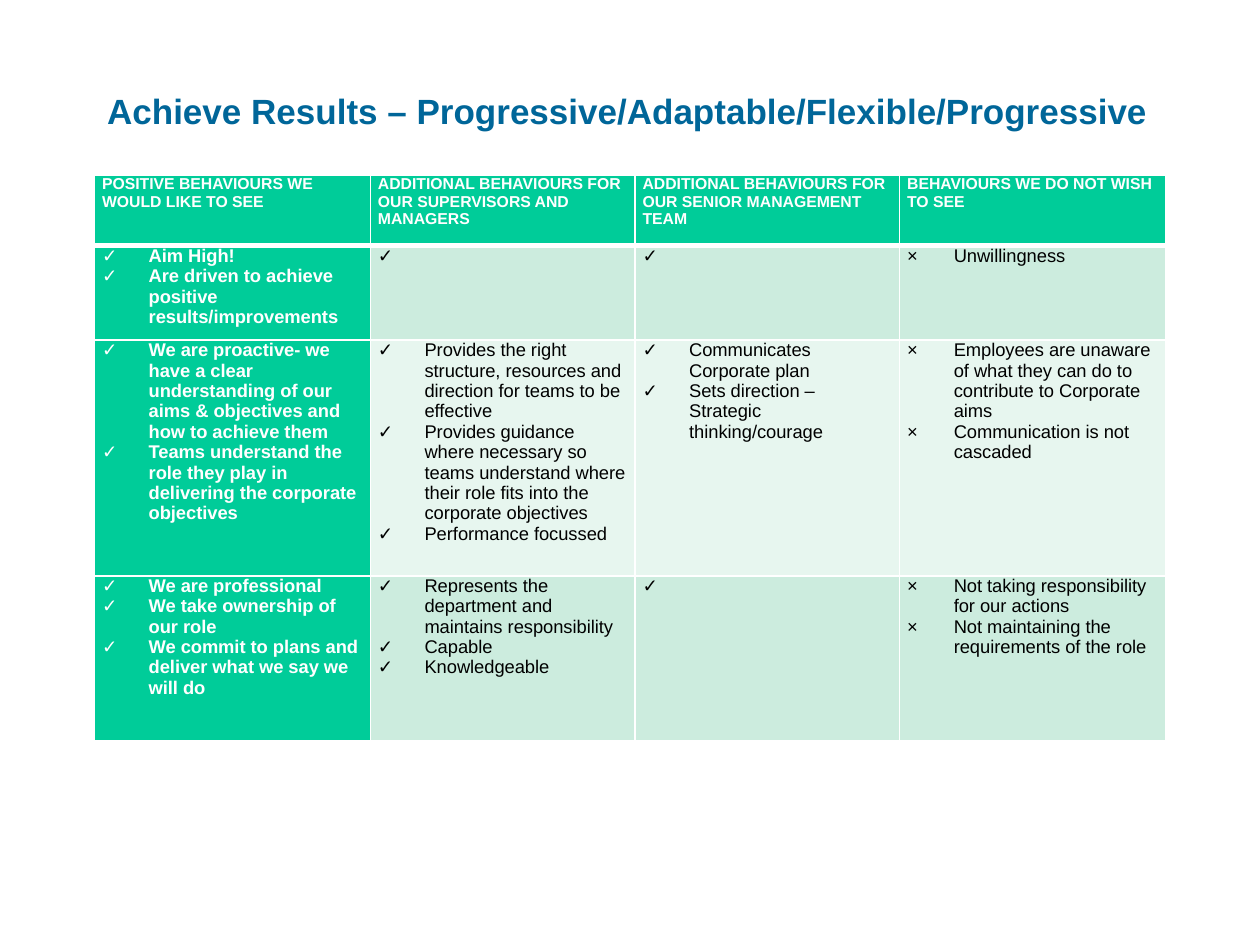
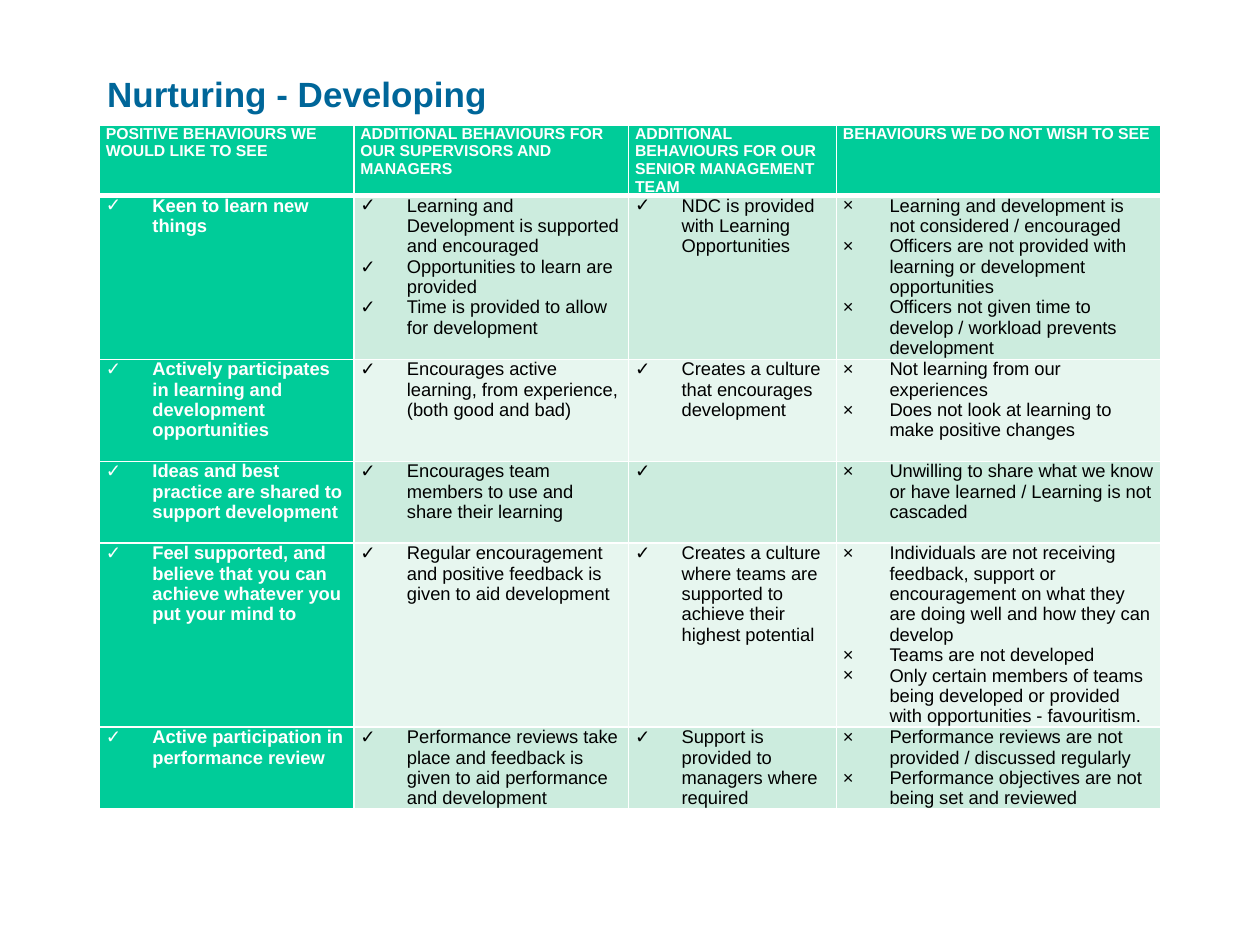
from lxml import etree
from pptx import Presentation
from pptx.dml.color import RGBColor
from pptx.enum.text import MSO_ANCHOR, MSO_AUTO_SIZE, PP_ALIGN
from pptx.oxml.ns import qn
from pptx.util import Inches, Pt

LEFT = PP_ALIGN.LEFT
TOP, MIDDLE = MSO_ANCHOR.TOP, MSO_ANCHOR.MIDDLE
NO_FIT = MSO_AUTO_SIZE.NONE
TITLE_ONLY = 5

# Colours
BLUE = RGBColor(0x00, 0x66, 0x99)
GREEN = RGBColor(0x00, 0xCC, 0x99)
MINT = RGBColor(0xCC, 0xEC, 0xDE)
PALE_MINT = RGBColor(0xE7, 0xF6, 0xEF)
WHITE = RGBColor(0xFF, 0xFF, 0xFF)
BLACK = RGBColor(0x00, 0x00, 0x00)

# Text formats
TITLE = {"name": "Arial", "size": Pt(20), "bold": True}
HEADING = {"name": "Arial", "size": Pt(9), "bold": True}
WANTED = {"name": "Arial", "size": Pt(10.5), "bold": True}
PLAIN = {"name": "Arial", "size": Pt(10.5), "bold": False}

TICK, CROSS = "✓", "×"
COLUMN_BULLETS = [TICK, TICK, TICK, CROSS]
BULLET_INDENT = Inches(0.37)
THIN, THICK = Pt(1), Pt(3)
BULLET_ONLY = [" "]

HEADINGS = [
    "POSITIVE BEHAVIOURS WE WOULD LIKE TO SEE",
    "ADDITIONAL BEHAVIOURS FOR OUR SUPERVISORS AND MANAGERS",
    "ADDITIONAL BEHAVIOURS FOR OUR SENIOR MANAGEMENT TEAM",
    "BEHAVIOURS WE DO NOT WISH TO SEE",
]

# Each row lists the points of its four cells
RESULTS_ROWS = [
    [
        ["Aim High!", "Are driven to achieve positive results/improvements"],
        BULLET_ONLY,
        BULLET_ONLY,
        ["Unwillingness"],
    ],
    [
        ["We are proactive- we have a clear understanding of our aims & objectives "
         "and how to achieve them",
         "Teams understand the role they play in delivering the corporate objectives"],
        ["Provides the right structure, resources and direction for teams to be effective",
         "Provides guidance where necessary so teams understand where their role fits "
         "into the corporate objectives",
         "Performance focussed"],
        ["Communicates Corporate plan", "Sets direction – Strategic thinking/courage"],
        ["Employees are unaware of what they can do to contribute to Corporate aims",
         "Communication is not cascaded"],
    ],
    [
        ["We are professional", "We take ownership of our role",
         "We commit to plans and deliver what we say we will do"],
        ["Represents the department and maintains responsibility", "Capable",
         "Knowledgeable"],
        BULLET_ONLY,
        ["Not taking responsibility for our actions",
         "Not maintaining the requirements of the role"],
    ],
]

NURTURING_ROWS = [
    [
        ["Keen to learn new things"],
        ["Learning and Development is supported and encouraged",
         "Opportunities to learn are provided",
         "Time is provided to allow for development"],
        ["NDC is provided with Learning Opportunities"],
        ["Learning and development is not considered / encouraged",
         "Officers are not provided with learning or development opportunities",
         "Officers not given time to develop / workload prevents development"],
    ],
    [
        ["Actively participates in learning and development opportunities"],
        ["Encourages active learning, from experience, (both good and bad)"],
        ["Creates a culture that encourages development"],
        ["Not learning from our experiences",
         "Does not look at learning to make positive changes"],
    ],
    [
        ["Ideas and best practice are shared to support development"],
        ["Encourages team members to use and share their learning"],
        BULLET_ONLY,
        ["Unwilling to share what we know or have learned / Learning is not cascaded"],
    ],
    [
        ["Feel supported, and believe that you can achieve whatever you put your mind to"],
        ["Regular encouragement and positive feedback is given to aid development"],
        ["Creates a culture where teams are supported to achieve their highest potential"],
        ["Individuals are not receiving feedback, support or encouragement on what they "
         "are doing well and how they can develop",
         "Teams are not developed",
         "Only certain members of teams being developed or provided with opportunities "
         "- favouritism."],
    ],
    [
        ["Active participation in performance review"],
        ["Performance reviews take place and feedback is given to aid performance "
         "and development"],
        ["Support is provided to managers where required"],
        ["Performance reviews are not provided / discussed regularly",
         "Performance objectives are not being set and reviewed"],
    ],
]


def add_span(paragraph, text, formats, color):
    span = paragraph.add_run()
    span.text = text
    for name, value in formats.items():
        setattr(span.font, name, value)
    span.font.color.rgb = color


def add_bullet(paragraph, symbol):
    properties = paragraph._p.get_or_add_pPr()
    properties.set("marL", str(BULLET_INDENT))
    properties.set("indent", str(-BULLET_INDENT))
    etree.SubElement(properties, qn("a:buFont")).set("typeface", "Arial")
    etree.SubElement(properties, qn("a:buChar")).set("char", symbol)


def set_borders(cell, top, bottom):
    properties = cell._tc.get_or_add_tcPr()
    widths = {"a:lnL": THIN, "a:lnR": THIN, "a:lnT": top, "a:lnB": bottom}
    for tag, width in widths.items():
        line = etree.SubElement(properties, qn(tag), w=str(width))
        fill = etree.SubElement(line, qn("a:solidFill"))
        etree.SubElement(fill, qn("a:srgbClr"), val=str(WHITE))


def fill_cell(cell, points, formats, color, background, inset, bullet=None):
    cell.margin_left = cell.margin_right = inset
    cell.margin_top = cell.margin_bottom = 0
    cell.vertical_anchor = TOP
    cell.fill.solid()
    cell.fill.fore_color.rgb = background
    frame = cell.text_frame
    for number, point in enumerate(points):
        paragraph = frame.add_paragraph() if number else frame.paragraphs[0]
        if bullet:
            add_bullet(paragraph, bullet)
        add_span(paragraph, point, formats, color)


def add_title(page, text, height):
    box = page.shapes.title
    box.left, box.top, box.width, box.height = (
        Inches(0.75), Inches(0.5), Inches(8.5), Inches(height))
    frame = box.text_frame
    frame.auto_size = NO_FIT
    frame.vertical_anchor = MIDDLE
    paragraph = frame.paragraphs[0]
    paragraph.alignment = LEFT
    add_span(paragraph, text, TITLE, BLUE)


def add_behaviour_table(page, left, top, widths, heights, inset, rows):
    box = page.shapes.add_table(
        len(heights), len(widths), Inches(left), Inches(top),
        Inches(sum(widths)), Inches(sum(heights)))
    table = box.table
    for column, width in zip(table.columns, widths):
        column.width = Inches(width)
    for row, height in zip(table.rows, heights):
        row.height = Inches(height)

    # Heading row, set off by a thick rule
    for column, heading in enumerate(HEADINGS):
        cell = table.cell(0, column)
        set_borders(cell, THIN, THICK)
        fill_cell(cell, [heading], HEADING, WHITE, GREEN, Inches(inset))

    # Banded rows with a green first column
    for number, row in enumerate(rows, start=1):
        band = MINT if number % 2 else PALE_MINT
        for column, points in enumerate(row):
            cell = table.cell(number, column)
            set_borders(cell, THICK if number == 1 else THIN, THIN)
            look = (PLAIN, BLACK, band) if column else (WANTED, WHITE, GREEN)
            fill_cell(cell, points, *look, Inches(inset), COLUMN_BULLETS[column])


def main():
    deck = Presentation()
    deck.slide_width, deck.slide_height = Inches(10), Inches(7.5)
    layout = deck.slide_layouts[TITLE_ONLY]

    # Achieve results
    page = deck.slides.add_slide(layout)
    add_title(page, "Achieve Results – Progressive/Adaptable/Flexible/Progressive", 0.75)
    add_behaviour_table(page, 0.75, 1.39, [2.19, 2.1, 2.1, 2.11],
                        [0.56, 0.75, 1.87, 1.31], 0.06, RESULTS_ROWS)

    # Nurturing
    page = deck.slides.add_slide(layout)
    add_title(page, "Nurturing - Developing", 0.49)
    add_behaviour_table(page, 0.79, 0.99, [2.02, 2.18, 1.65, 2.57],
                        [0.56, 1.3, 0.81, 0.65, 1.46, 0.65], 0.05, NURTURING_ROWS)

    deck.save("out.pptx")


if __name__ == "__main__":
    main()
